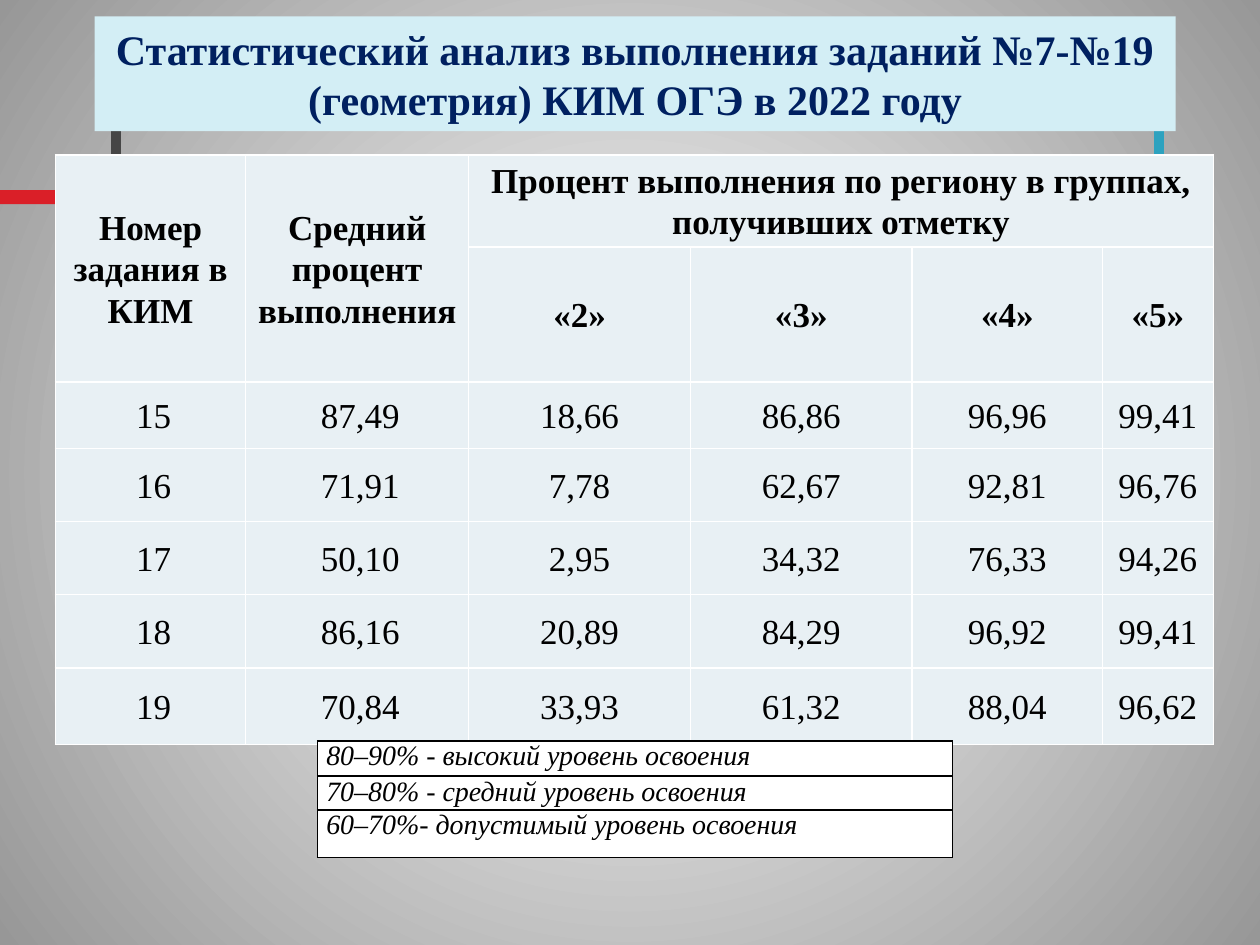
from lxml.etree import SubElement
from pptx import Presentation
from pptx.dml.color import RGBColor
from pptx.enum.shapes import MSO_SHAPE
from pptx.enum.text import MSO_ANCHOR, MSO_AUTO_SIZE, PP_ALIGN
from pptx.oxml.ns import qn
from pptx.util import Inches, Pt

WHITE = RGBColor(0xFF, 0xFF, 0xFF)
BLACK = RGBColor(0x00, 0x00, 0x00)
EDGE_GREY = RGBColor(0x97, 0x97, 0x97)
DARK_GREY = RGBColor(0x46, 0x46, 0x46)
RED = RGBColor(0xDA, 0x1F, 0x28)
TEAL = RGBColor(0x2D, 0xA2, 0xBF)
NAVY = RGBColor(0x00, 0x20, 0x60)
TITLE_FILL = RGBColor(0xD3, 0xEE, 0xF5)
CELL_FILL = RGBColor(0xE8, 0xF0, 0xF4)

HEADING = "Статистический анализ выполнения заданий №7-№19 (геометрия) КИМ ОГЭ в 2022 году"
RESULTS = [
    ["Номер\nзадания в КИМ", "Средний процент выполнения",
     "Процент выполнения по региону в группах, получивших отметку", "", "", ""],
    ["", "", "«2»", "«3»", "«4»", "«5»"],
    ["15", "87,49", "18,66", "86,86", "96,96", "99,41"],
    ["16", "71,91", "7,78", "62,67", "92,81", "96,76"],
    ["17", "50,10", "2,95", "34,32", "76,33", "94,26"],
    ["18", "86,16", "20,89", "84,29", "96,92", "99,41"],
    ["19", "70,84", "33,93", "61,32", "88,04", "96,62"],
]
RESULT_SPANS = [((0, 0), (1, 0)), ((0, 1), (1, 1)), ((0, 2), (0, 5))]
LEVELS = [
    ["80–90% - высокий уровень освоения"],
    ["70–80% - средний уровень освоения"],
    ["60–70%- допустимый уровень освоения"],
]

HEADER_FONT = {"size": Pt(20), "bold": True, "italic": False}
VALUE_FONT = {"size": Pt(20), "bold": False, "italic": False}
LEVEL_FONT = {"size": Pt(16), "bold": False, "italic": True}
HEADER_PARAGRAPH = {"alignment": PP_ALIGN.CENTER, "line_spacing": 1.07}
VALUE_PARAGRAPH = {**HEADER_PARAGRAPH, "space_after": Pt(8)}
LEVEL_PARAGRAPH = {"alignment": PP_ALIGN.JUSTIFY}


def apply(target, values):
    for name, value in values.items():
        setattr(target, name, value)


class SlideBuilder:
    font_name = "Times New Roman"

    def __init__(self, slide):
        self.slide = slide
        self.shapes = slide.shapes

    def background(self, center, edge):
        """Radial gradient from the middle of the slide."""
        fill = self.slide.background.fill
        fill.gradient()
        for stop, position, color in zip(fill.gradient_stops, (0, 1), (center, edge)):
            stop.position = position
            stop.color.rgb = color
        gradient = self.slide.element.xpath(".//p:bg//a:gradFill")[0]
        gradient.remove(gradient.find(qn("a:lin")))
        circle = SubElement(gradient, qn("a:path"), path="circle")
        SubElement(circle, qn("a:fillToRect"), l="50000", t="50000", r="50000", b="50000")

    def bar(self, left, top, width, height, color):
        bar = self.shapes.add_shape(
            MSO_SHAPE.RECTANGLE, Inches(left), Inches(top), Inches(width), Inches(height))
        bar.shadow.inherit = False
        bar.fill.solid()
        bar.fill.fore_color.rgb = color
        bar.line.fill.background()

    def bracket(self, open_x, closed_x, top, color):
        """Three-sided frame mark whose long side stands at closed_x."""
        bottom = top + 1.17
        corners = [(open_x, top), (closed_x, top), (closed_x, bottom), (open_x, bottom)]
        start, *others = [(Inches(x), Inches(y)) for x, y in corners]
        outline = self.shapes.build_freeform(*start)
        outline.add_line_segments(others, close=False)
        bracket = outline.convert_to_shape()
        bracket.shadow.inherit = False
        bracket.fill.background()
        bracket.line.color.rgb = color
        bracket.line.width = Pt(6)

    def title(self, text, left, top, width, height):
        title = self.shapes.title
        apply(title, {"left": Inches(left), "top": Inches(top),
                      "width": Inches(width), "height": Inches(height)})
        title.fill.solid()
        title.fill.fore_color.rgb = TITLE_FILL
        apply(title.text_frame, {"word_wrap": True, "vertical_anchor": MSO_ANCHOR.MIDDLE,
                                 "auto_size": MSO_AUTO_SIZE.SHAPE_TO_FIT_TEXT})
        self.fill_text(title.text_frame, text, {"size": Pt(24), "bold": True},
                       {"alignment": PP_ALIGN.CENTER}, NAVY)
        # The title lies above the frame marks
        self.shapes.element.append(title.element)

    def fill_text(self, frame, text, font, paragraph_format, color):
        frame.text = text
        for paragraph in frame.paragraphs:
            apply(paragraph, paragraph_format)
            for run in paragraph.runs:
                apply(run.font, {"name": self.font_name, **font})
                run.font.color.rgb = color

    def table(self, rows, left, top, widths, heights, fill, border, spans=()):
        frame = self.shapes.add_table(
            len(rows), len(widths), Inches(left), Inches(top),
            Inches(sum(widths)), Inches(sum(heights)))
        table = frame.table
        apply(table, {"first_row": False, "horz_banding": False})
        for column, width in zip(table.columns, widths):
            column.width = Inches(width)
        for row, height in zip(table.rows, heights):
            row.height = Inches(height)
        for first, last in spans:
            table.cell(*first).merge(table.cell(*last))
        for cell in table.iter_cells():
            self.cell_style(cell, fill, border)
        return table

    def cell_style(self, cell, fill, border):
        properties = cell._tc.get_or_add_tcPr()
        for side in ("L", "R", "T", "B"):
            line = SubElement(properties, qn(f"a:ln{side}"), w=str(Pt(1)))
            solid = SubElement(line, qn("a:solidFill"))
            SubElement(solid, qn("a:srgbClr"), val=str(border))
        cell.fill.solid()
        cell.fill.fore_color.rgb = fill
        apply(cell, {"margin_left": Inches(0.07), "margin_right": Inches(0.07),
                     "margin_top": 0, "margin_bottom": 0})

    def results_table(self):
        table = self.table(
            RESULTS, 0.44, 1.23, [1.51, 1.77, 1.76, 1.76, 1.51, 0.88],
            [0.73, 0.57, 0.53, 0.58, 0.58, 0.58, 0.61], CELL_FILL, WHITE, RESULT_SPANS)
        for r, row in enumerate(RESULTS):
            is_header = r < 2
            font = HEADER_FONT if is_header else VALUE_FONT
            paragraph_format = HEADER_PARAGRAPH if is_header else VALUE_PARAGRAPH
            for c, text in enumerate(row):
                cell = table.cell(r, c)
                if cell.is_spanned:
                    continue
                cell.vertical_anchor = MSO_ANCHOR.MIDDLE
                self.fill_text(cell.text_frame, text, font, paragraph_format, BLACK)
                if not is_header and c < 2:
                    properties = cell.text_frame.paragraphs[0]._p.get_or_add_pPr()
                    properties.set("indent", str(Inches(0.05)))

    def levels_table(self):
        table = self.table(LEVELS, 2.52, 5.88, [5.04], [0.28, 0.23, 0.38], WHITE, BLACK)
        for r, (text,) in enumerate(LEVELS):
            self.fill_text(table.cell(r, 0).text_frame, text, LEVEL_FONT, LEVEL_PARAGRAPH, BLACK)


def main():
    presentation = Presentation()
    presentation.slide_width = Inches(10)
    presentation.slide_height = Inches(7.5)
    builder = SlideBuilder(presentation.slides.add_slide(presentation.slide_layouts[5]))
    builder.background(WHITE, EDGE_GREY)
    builder.bar(0, 1.51, 2.33, 0.11, RED)
    builder.bracket(1.08, 0.92, 0.61, DARK_GREY)
    builder.bracket(9.04, 9.2, 0.3, TEAL)
    builder.title(HEADING, 0.75, 0.13, 8.58, 0.91)
    builder.results_table()
    builder.levels_table()
    presentation.save("out.pptx")


if __name__ == "__main__":
    main()
